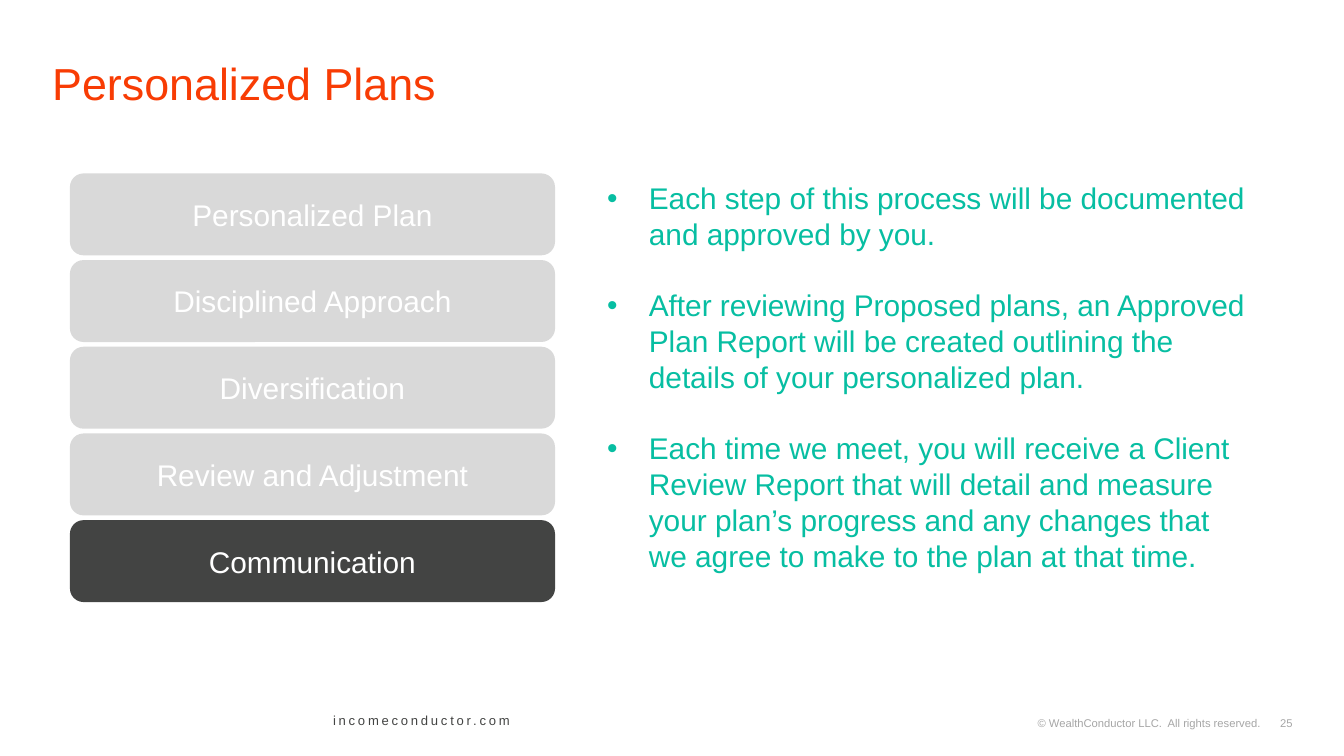
from lxml.etree import SubElement as Sub
from pptx import Presentation as Deck
from pptx.dml.color import RGBColor as Color
from pptx.enum.shapes import MSO_SHAPE as Kind
from pptx.enum.text import MSO_ANCHOR as Anchor, PP_ALIGN as Align
from pptx.oxml.ns import qn
from pptx.util import Inches, Pt

ORANGE = Color(0xF8, 0x3C, 0x04)
TEAL = Color(0x07, 0xBE, 0xA2)
DARK = Color(0x43, 0x44, 0x43)
PALE = Color(0xD9, 0xD9, 0xD9)
GRAY = Color(0xA6, 0xA6, 0xA6)
WHITE = Color(0xFF, 0xFF, 0xFF)

STEPS = ["Personalized Plan", "Disciplined Approach", "Diversification",
         "Review and Adjustment", "Communication"]
POINTS = [
    "Each step of this process will be documented and approved by you.",
    "After reviewing Proposed plans, an Approved Plan Report will be "
    "created outlining the details of your personalized plan.",
    "Each time we meet, you will receive a Client Review Report that will "
    "detail and measure your plan’s progress and any changes that we agree "
    "to make to the plan at that time.",
]


def style(item, form):
    """Set each attribute named in form on item."""
    for key, value in form.items():
        setattr(item, key, value)


def write(para, text, size, color):
    """Put one styled run in a paragraph and return the run."""
    run = para.add_run()
    run.text = text
    style(run.font, {"name": "Arial", "size": Pt(size)})
    run.font.color.rgb = color
    return run


def add_box(slide, place, wrap=True, anchor=Anchor.TOP):
    """Add a text box and return its frame."""
    frame = slide.shapes.add_textbox(*map(Inches, place)).text_frame
    style(frame, {"word_wrap": wrap, "vertical_anchor": anchor})
    return frame


def add_step(slide, top, text, fill):
    """Add one rounded bar of the process."""
    place = map(Inches, (0.52, top, 3.61, 0.61))
    bar = slide.shapes.add_shape(Kind.ROUNDED_RECTANGLE, *place)
    bar.shadow.inherit = False
    bar.fill.solid()
    bar.fill.fore_color.rgb = fill
    bar.line.fill.background()
    frame = bar.text_frame
    frame.vertical_anchor = Anchor.MIDDLE
    para = frame.paragraphs[0]
    para.alignment = Align.CENTER
    write(para, text, 16, WHITE)


def add_point(para, text, gap):
    """Fill a paragraph as a bullet point with a hanging indent."""
    props = para._p.get_or_add_pPr()
    props.set("marL", str(Inches(0.31)))
    props.set("indent", str(-Inches(0.31)))
    Sub(props, qn("a:buFont"), typeface="Arial")
    Sub(props, qn("a:buChar"), char="•")
    para.space_before = Pt(gap)
    write(para, text, 16, TEAL)


def add_points(slide):
    """Add the list of points."""
    frame = add_box(slide, (4.42, 1.29, 5, 3.33))
    for i, text in enumerate(POINTS):
        para = frame.add_paragraph() if i else frame.paragraphs[0]
        add_point(para, text, 19 if i else 0)


def add_footer(slide):
    """Add the copyright line with the page number, and the web address."""
    para = add_box(slide, (4.74, 5.28, 5, 0.2)).paragraphs[0]
    tabs = Sub(para._p.get_or_add_pPr(), qn("a:tabLst"))
    for stop in (4.54, 4.78):
        Sub(tabs, qn("a:tab"), pos=str(Inches(stop)), algn="r")
    write(para, "\t© WealthConductor LLC.  All rights reserved.\t25", 6, GRAY)
    site = add_box(slide, (2.38, 5.25, 1.56, 0.22), wrap=False)
    run = write(site.paragraphs[0], "incomeconductor.com", 7, DARK)
    run.font._element.set("spc", "150")


def main():
    """Build the slide and save it."""
    deck = Deck()
    wide = Inches(10)
    style(deck, {"slide_width": wide, "slide_height": wide * 9 // 16})
    slide = deck.slides.add_slide(deck.slide_layouts[6])
    add_footer(slide)
    title = add_box(slide, (0.29, 0.28, 9.36, 0.67), anchor=Anchor.MIDDLE)
    write(title.paragraphs[0], "Personalized Plans", 24, ORANGE)
    for i, text in enumerate(STEPS):
        fill = DARK if text == "Communication" else PALE
        add_step(slide, 1.29 + i * 2.58 / 4, text, fill)
    add_points(slide)
    deck.save("out.pptx")


if __name__ == "__main__":
    main()
